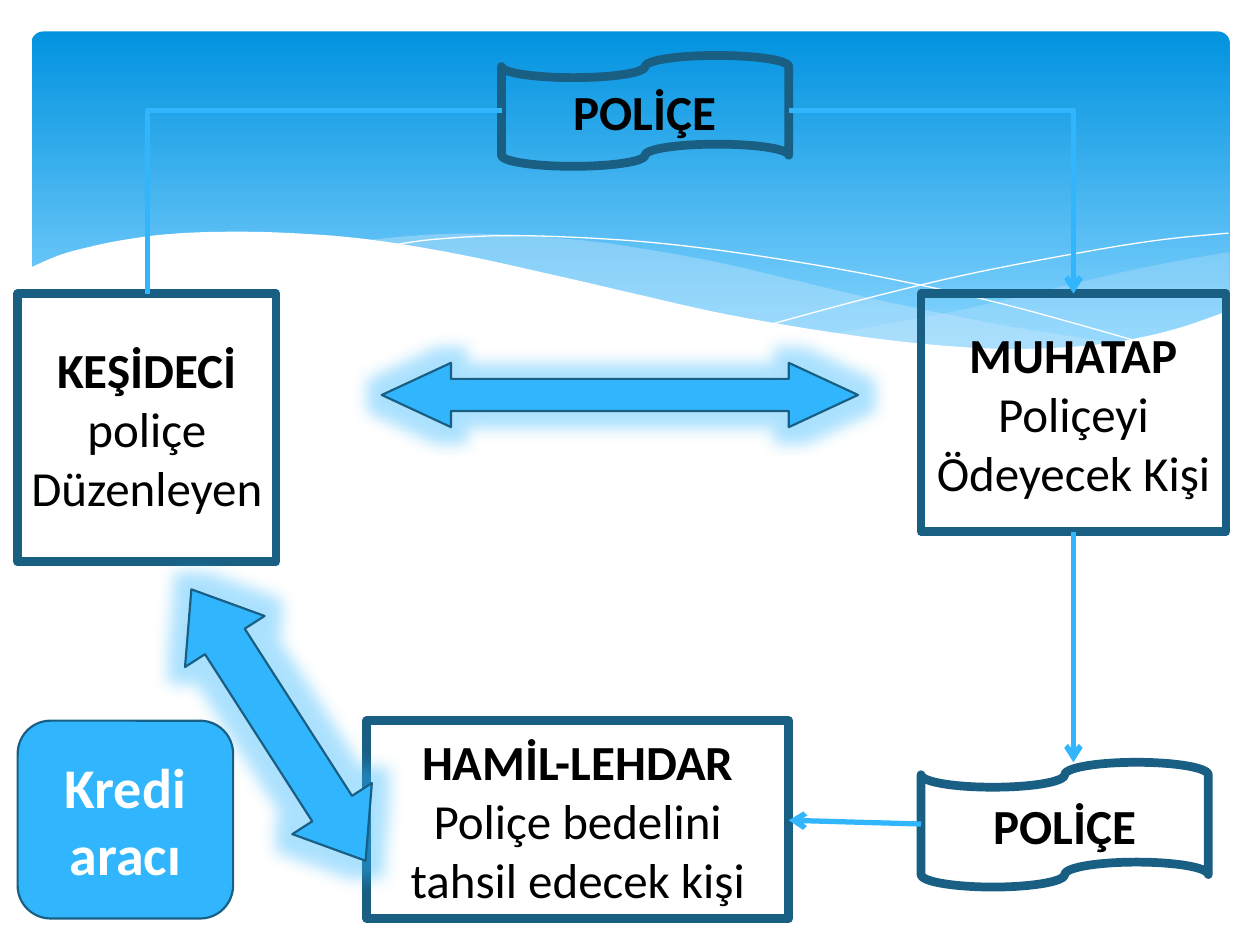
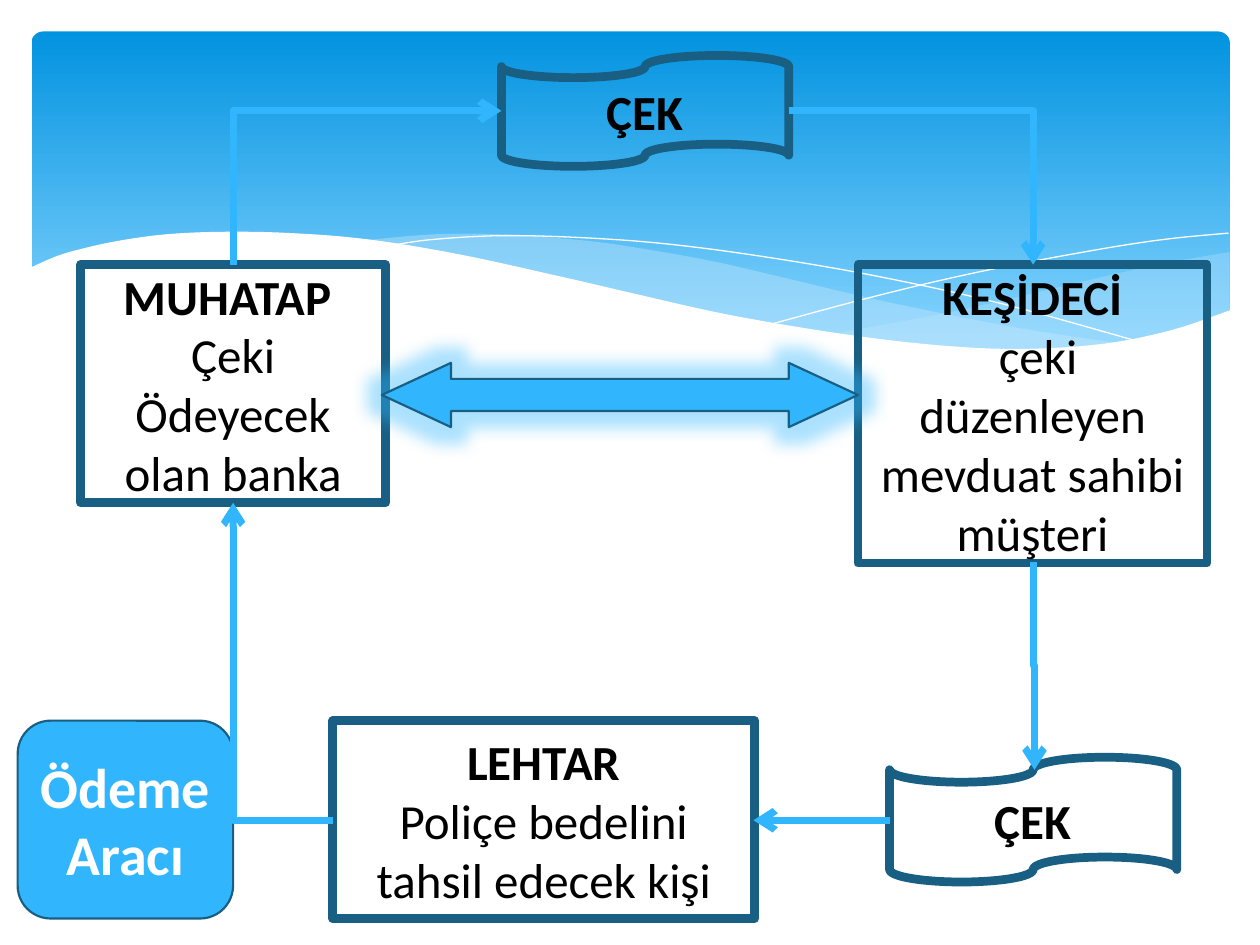
"""Build two slides showing how a bill of exchange and a cheque circulate."""
from dataclasses import dataclass
from math import cos, radians, sin

from lxml import etree
from pptx import Presentation
from pptx.dml.color import RGBColor
from pptx.enum.shapes import MSO_CONNECTOR, MSO_SHAPE
from pptx.enum.text import MSO_ANCHOR, PP_ALIGN
from pptx.oxml.ns import qn
from pptx.util import Pt

PX = 9144
BLANK_LAYOUT = 6
RECT = MSO_SHAPE.RECTANGLE
ROUNDED = MSO_SHAPE.ROUNDED_RECTANGLE
TAPE = MSO_SHAPE.FLOWCHART_PUNCHED_TAPE
DOUBLE_ARROW = MSO_SHAPE.LEFT_RIGHT_ARROW
STRAIGHT, ELBOW = MSO_CONNECTOR.STRAIGHT, MSO_CONNECTOR.ELBOW
CENTER, MIDDLE = PP_ALIGN.CENTER, MSO_ANCHOR.MIDDLE


@dataclass(frozen=True)
class Theme:
    """Colours, type and line sizes shared by both slides."""
    font: str = "Calibri"
    ink: str = "000000"
    white: str = "FFFFFF"
    sky: str = "31B6FD"
    navy: str = "195F84"
    band_top: str = "0293E0"
    band_bottom: str = "83D3FE"
    wave: str = "C6E7FC"
    body_size: int = 28
    badge_size: int = 32
    frame_line: float = 5
    thin_line: float = 1.25
    glow_radius: int = 18
    glow_alpha: int = 40


THEME = Theme()

WAVES = [
    (29, [[(976, 200), (935, 207), (891, 216), (832, 230), (753, 248), (661, 265)],
          [(661, 265), (705, 271), (757, 276), (814, 278), (854, 276), (897, 270),
           (935, 262), (976, 247)]]),
    (40, [[(893, 273), (807, 260), (706, 240), (629, 222), (569, 208), (514, 198),
           (465, 191), (399, 186), (344, 186), (286, 191)],
          [(286, 191), (342, 199), (404, 211), (491, 232), (566, 248), (650, 264),
           (709, 272), (773, 277), (828, 278), (893, 273)]]),
]
RIPPLES = [
    [(309, 195), (344, 190), (401, 187), (469, 189), (533, 194), (608, 204),
     (695, 219), (795, 241), (907, 272)],
    [(613, 257), (695, 235), (776, 216), (866, 199), (924, 190), (975, 185)],
]
SHORE = [(977, 246), (930, 262), (875, 273), (809, 277), (744, 274), (668, 265),
         (579, 250), (503, 233), (447, 220), (365, 202), (292, 190), (230, 185),
         (177, 184), (132, 186), (95, 191), (67, 197), (46, 203), (23, 213)]
SHORE_BASE = [(23, 329), (977, 329)]


def rgb(code):
    """Turn a hex code into a colour."""
    return RGBColor.from_string(code)


def emu(*lengths):
    """Turn px lengths into EMU."""
    return [round(length * PX) for length in lengths]


def curve(knots, steps=6):
    """Return points on a smooth curve through the knots."""
    padded = [knots[0], *knots, knots[-1]]
    points = [knots[0]]
    for a, b, c, d in zip(padded, padded[1:], padded[2:], padded[3:]):
        for step in range(1, steps + 1):
            t = step / steps
            points.append(tuple(
                q + t / 2 * (r - p + t * (2 * p - 5 * q + 4 * r - s
                                          + t * (3 * (q - r) + s - p)))
                for p, q, r, s in zip(a, b, c, d)))
    return points


def add_outline(slide, points, color, alpha=100, closed=True):
    """Draw a filled area, or an open hairline."""
    start, *rest = [emu(*point) for point in points]
    builder = slide.shapes.build_freeform(*start, scale=1.0)
    builder.add_line_segments(rest, close=closed)
    outline = builder.convert_to_shape()
    outline.shadow.inherit = False
    if not closed:
        outline.fill.background()
        outline.line.color.rgb = rgb(color)
        outline.line.width = 0
        return
    outline.line.fill.background()
    outline.fill.solid()
    outline.fill.fore_color.rgb = rgb(color)
    if alpha < 100:
        tone = next(outline.element.spPr.iter(qn("a:srgbClr")))
        etree.SubElement(tone, qn("a:alpha"), val=str(alpha * 1000))


def add_figure(slide, kind, box, fill=None, line_width=THEME.thin_line):
    """Add a preset shape with the shared dark line."""
    figure = slide.shapes.add_shape(kind, *emu(*box))
    figure.shadow.inherit = False
    if fill:
        figure.fill.solid()
        figure.fill.fore_color.rgb = rgb(fill)
    else:
        figure.fill.background()
    figure.line.color.rgb = rgb(THEME.navy)
    figure.line.width = Pt(line_width)
    return figure


def write(figure, paragraphs, size, color):
    """Fill a shape with centred paragraphs of (text, bold) runs."""
    frame = figure.text_frame
    frame.word_wrap = True
    frame.vertical_anchor = MIDDLE
    for index, runs in enumerate(paragraphs):
        paragraph = frame.add_paragraph() if index else frame.paragraphs[0]
        paragraph.alignment = CENTER
        for text, bold in runs:
            run = paragraph.add_run()
            run.text = text
            run.font.color.rgb = rgb(color)
            formats = {"name": THEME.font, "size": Pt(size), "bold": bold}
            for attribute, value in formats.items():
                setattr(run.font, attribute, value)


def add_party(slide, box, role, duty, same_paragraph=False):
    """Add a framed party with its role and duty."""
    title, detail = (role, True), (duty, False)
    paragraphs = [[title, detail]] if same_paragraph else [[title], [detail]]
    party = add_figure(slide, RECT, box, line_width=THEME.frame_line)
    write(party, paragraphs, THEME.body_size, THEME.ink)


def add_document(slide, box, label):
    """Add a waving sheet that stands for the document."""
    sheet = add_figure(slide, TAPE, box, line_width=THEME.frame_line)
    write(sheet, [[(label, True)]], THEME.body_size, THEME.ink)


def add_badge(slide, label):
    """Add the purpose badge at the lower left."""
    badge = add_figure(slide, ROUNDED, (14, 572, 171, 157), THEME.sky)
    write(badge, [[(label, True)]], THEME.badge_size, THEME.white)


def add_relation(slide, box, head, turn=0):
    """Add a glowing double arrow between two parties."""
    relation = add_figure(slide, DOUBLE_ARROW, box, THEME.sky)
    relation.adjustments[1] = head
    relation.rotation = turn
    effects = relation.element.spPr.find(qn("a:effectLst"))
    glow = etree.SubElement(effects, qn("a:glow"), rad=str(Pt(THEME.glow_radius)))
    tone = etree.SubElement(glow, qn("a:srgbClr"), val=THEME.sky)
    etree.SubElement(tone, qn("a:alpha"), val=str(THEME.glow_alpha * 1000))


def add_flow(slide, start, end, width, preset=None, turn=0, arrow=True):
    """Add a connector; a preset bends it in a frame rotated by turn."""
    middle_x, middle_y = [(a + b) / 2 for a, b in zip(start, end)]
    c, s = cos(radians(turn)), sin(radians(turn))
    ends = []
    for x, y in (start, end):
        dx, dy = x - middle_x, y - middle_y
        ends += [middle_x + dx * c + dy * s, middle_y - dx * s + dy * c]
    flow = slide.shapes.add_connector(ELBOW if preset else STRAIGHT, *emu(*ends))
    flow.line.color.rgb = rgb(THEME.sky)
    flow.line.width = Pt(width)
    properties = flow.element.spPr
    if preset:
        properties.find(qn("a:prstGeom")).set("prst", preset)
    if turn:
        properties.find(qn("a:xfrm")).set("rot", str(turn * 60000))
    if arrow:
        etree.SubElement(properties.find(qn("a:ln")), qn("a:tailEnd"), type="arrow")
    etree.SubElement(properties, qn("a:effectLst"))


def add_backdrop(slide):
    """Draw the blue band with its waves."""
    band = add_figure(slide, ROUNDED, (25, 25, 951, 270))
    band.adjustments[0] = 0.034
    band.line.fill.background()
    band.fill.gradient()
    band.fill.gradient_angle = 270
    stops = zip(band.fill.gradient_stops, (0, 0.9),
                (THEME.band_top, THEME.band_bottom))
    for stop, position, color in stops:
        stop.position = position
        stop.color.rgb = rgb(color)
    for alpha, edges in WAVES:
        points = [point for edge in edges for point in curve(edge)]
        add_outline(slide, points, THEME.wave, alpha)
    for ripple in RIPPLES:
        add_outline(slide, curve(ripple), THEME.white, closed=False)
    add_outline(slide, curve(SHORE) + SHORE_BASE, THEME.white)


def start_slide(deck, document):
    """Add a slide with the backdrop and the document at the top."""
    slide = deck.slides.add_slide(deck.slide_layouts[BLANK_LAYOUT])
    add_backdrop(slide)
    add_document(slide, (398, 44, 228, 88), document)
    return slide


def build_bill(deck):
    """Build the bill of exchange slide."""
    slide = start_slide(deck, "POLİÇE")
    add_party(slide, (731, 233, 242, 189), "MUHATAP ", "Poliçeyi Ödeyecek Kişi", True)
    add_party(slide, (291, 572, 335, 157), "HAMİL-LEHDAR",
              "Poliçe bedelini tahsil edecek kişi")
    add_party(slide, (14, 233, 205, 213), "KEŞİDECİ", " poliçe Düzenleyen", True)
    add_relation(slide, (303, 288, 378, 51), 1.077)
    add_flow(slide, (626, 88), (852, 233), 3, "bentConnector2")
    add_flow(slide, (852, 422), (852, 605), 3, "bentConnector3", 270)
    add_relation(slide, (93, 538, 256, 75), 0.656, 57.3)
    add_flow(slide, (117, 233), (398, 88), 3, "bentConnector2", 90, arrow=False)
    add_document(slide, (731, 605, 228, 99), "POLİÇE")
    add_flow(slide, (731, 654), (626, 651), 3)
    add_badge(slide, "Kredi aracı")


def build_cheque(deck):
    """Build the cheque slide."""
    slide = start_slide(deck, "ÇEK")
    add_party(slide, (64, 210, 242, 189), "MUHATAP ", "Çeki Ödeyecek olan banka")
    add_party(slide, (264, 572, 335, 157), "LEHTAR",
              "Poliçe bedelini tahsil edecek kişi")
    add_party(slide, (681, 210, 277, 237), "KEŞİDECİ",
              " çeki düzenleyen mevduat sahibi müşteri")
    add_relation(slide, (303, 288, 378, 51), 1.077)
    add_document(slide, (706, 601, 228, 99), "ÇEK")
    add_flow(slide, (706, 651), (598, 651), 4)
    add_badge(slide, "Ödeme Aracı")
    add_flow(slide, (626, 88), (820, 210), 4, "bentConnector2")
    add_flow(slide, (820, 446), (821, 611), 4, "bentConnector3", 270)
    add_flow(slide, (264, 651), (185, 399), 4, "bentConnector2", 180)
    add_flow(slide, (185, 210), (398, 88), 4, "bentConnector2", 90)


def main():
    """Build and save the deck."""
    deck = Presentation()
    deck.slide_width, deck.slide_height = emu(1000, 750)
    build_bill(deck)
    build_cheque(deck)
    deck.save("out.pptx")


if __name__ == "__main__":
    main()
